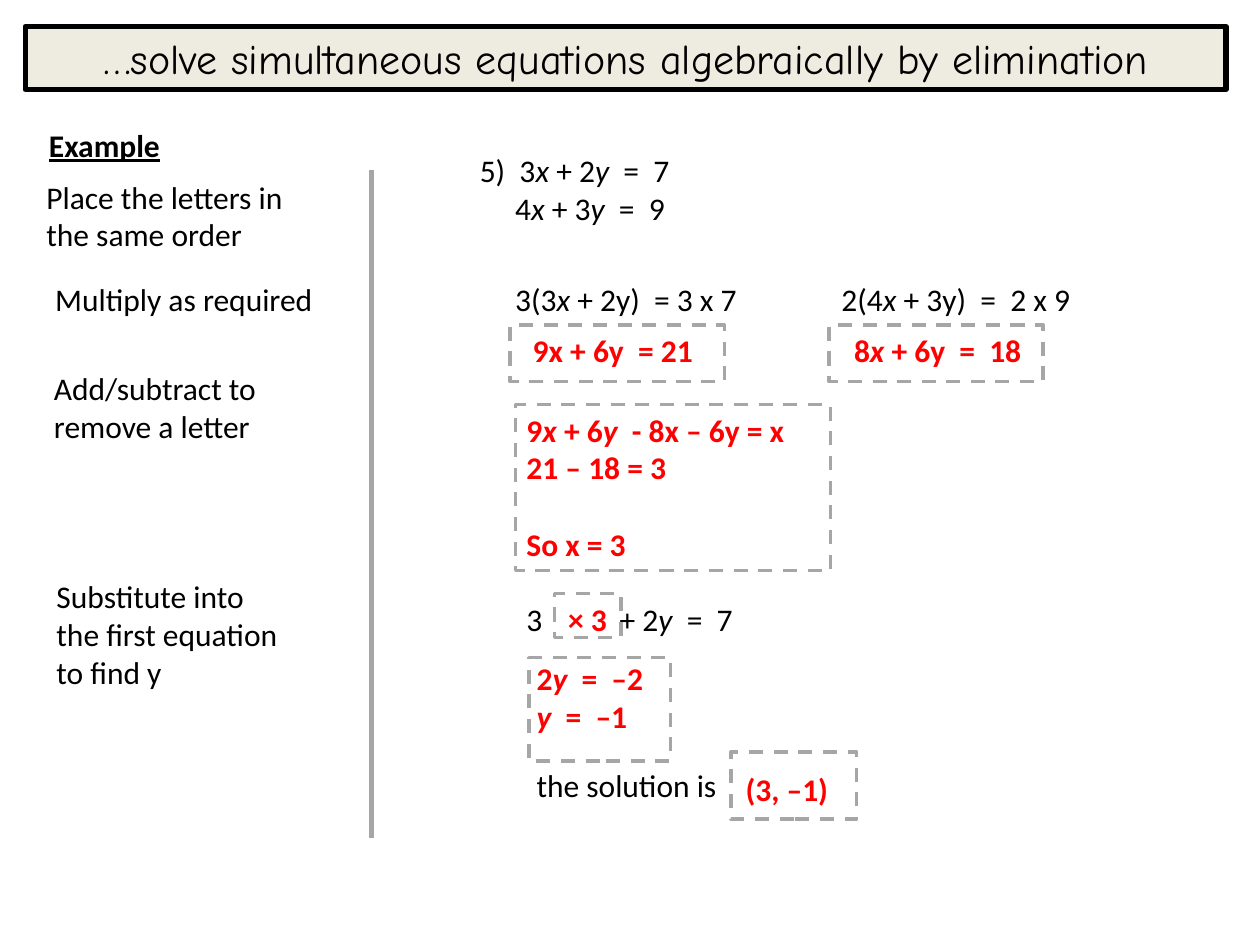
from lxml.etree import SubElement
from pptx import Presentation
from pptx.dml.color import RGBColor
from pptx.enum.dml import MSO_LINE
from pptx.enum.shapes import MSO_CONNECTOR, MSO_SHAPE
from pptx.enum.text import MSO_ANCHOR, PP_ALIGN
from pptx.oxml.ns import qn
from pptx.util import Inches, Pt

BLACK, RED, GREY, CREAM = "000000", "FF0000", "A6A6A6", "EEECE1"

STEPS = [
    ((2.7, 13.6, 21.6, 7.1), "Place the letters in the same order"),
    ((3.4, 21.7, 23, 4), "Multiply as required"),
    ((3.3, 28.8, 19.1, 7.1), "Add/subtract to remove a letter"),
    ((3.5, 45.3, 20.3, 10.1), "Substitute into the first equation to find y"),
]
WORKING = [
    ((39.9, 21.7, 20.4, 4), "3(3|x |+ 2y)  = 3 x 7", True),
    ((65.8, 21.7, 21.6, 4), "2(4|x |+ 3y)  =  2 x 9", False),
    ((41.6, 60.3, 16.5, 4), "the solution is", False),
]
ANSWERS = [
    ((41.3, 25.8, 20.3, 4), ["9x + 6y  = 21"], True),
    ((66.8, 25.8, 16.6, 4), ["8|x |+ 6y  =  18"], False),
    ((44.1, 47.1, 5.1, 4), ["× 3"], False),
    ((41.6, 51.8, 11.5, 7.1), ["2|y|  =  –2", "|y  |=  –1"], True),
    ((58.2, 60.6, 8.6, 4), ["(3, –1)"], False),
]
FRAMES = [
    (40.9, 32.1, 25, 13.2),
    (42, 52.2, 11.2, 8.2),
    (44, 47.1, 5.3, 3.5),
    (58, 59.7, 10, 5.3),
    (40.5, 25.8, 17, 4.5),
    (65.8, 25.8, 17, 4.5),
]


def grid(*units):
    """Turn units of a 100 by 75 grid into lengths."""
    return [Inches(u / 10) for u in units]


def rgb(code):
    """Turn a hex string into a colour."""
    return RGBColor.from_string(code)


def add_run(p, text, size=18, font="Calibri", color=BLACK, bold=False,
            italic=False, underline=False):
    """Add one formatted run to a paragraph."""
    r = p.add_run()
    r.text = text
    f = r.font
    f.size, f.name, f.bold, f.italic = Pt(size), font, bold, italic
    f.underline = underline
    f.color.rgb = rgb(color)


def add_text(s, box, lines, wrap=True, **style):
    """Add a text box in which bars switch italics on and off."""
    tf = s.shapes.add_textbox(*grid(*box)).text_frame
    tf.word_wrap = wrap
    for i, line in enumerate(lines):
        p = tf.add_paragraph() if i else tf.paragraphs[0]
        for j, part in enumerate(line.split("|")):
            if part:
                add_run(p, part, italic=j % 2 == 1, **style)
    return tf.paragraphs


def add_box(s, box, line, width, fill=None, dash=None):
    """Add an outlined rectangle."""
    sp = s.shapes.add_shape(MSO_SHAPE.RECTANGLE, *grid(*box))
    sp.shadow.inherit = False
    if fill:
        sp.fill.solid()
        sp.fill.fore_color.rgb = rgb(fill)
    else:
        sp.fill.background()
    sp.line.color.rgb = rgb(line)
    sp.line.width = Pt(width)
    sp.line.dash_style = dash
    return sp


def add_title(s, text):
    """Add the framed title bar."""
    tf = add_box(s, (2, 2.1, 95.3, 5), BLACK, 3, CREAM).text_frame
    tf.word_wrap = True
    tf.vertical_anchor = MSO_ANCHOR.MIDDLE
    p = tf.paragraphs[0]
    p.alignment = PP_ALIGN.CENTER
    add_run(p, text, 24, "Comic Neue")


def add_divider(s, x, top, bottom):
    """Add the vertical rule between steps and working."""
    c = s.shapes.add_connector(MSO_CONNECTOR.STRAIGHT, *grid(x, top, x, bottom))
    c.line.color.rgb = rgb(GREY)
    c.line.width = Pt(3)
    SubElement(c._element.spPr, qn("a:effectLst"))


def set_indent(p, units):
    """Indent a whole paragraph."""
    p._p.get_or_add_pPr().set("marL", str(grid(units)[0]))


def set_tab(p, units):
    """Give a paragraph one left tab stop."""
    tabs = SubElement(p._p.get_or_add_pPr(), qn("a:tabLst"))
    SubElement(tabs, qn("a:tab"), pos=str(grid(units)[0]), algn="l")


def main():
    """Build and save the slide."""
    prs = Presentation()
    prs.slide_width, prs.slide_height = grid(100, 75)
    s = prs.slides.add_slide(prs.slide_layouts[6])
    add_title(s, "…solve simultaneous equations algebraically by elimination")
    add_text(s, (2.9, 9.5, 25, 4), ["Example"], bold=True, underline=True)
    for box, text in STEPS:
        add_text(s, box, [text])
    add_divider(s, 29.5, 13.5, 66.5)

    question = add_text(s, (37.1, 11.5, 19, 7.1),
                        ["5)  3|x |+ 2|y|  =  7", "4|x| + 3|y|  =  9"])
    set_indent(question[1], 2.8)
    for box, text, wrap in WORKING:
        add_text(s, box, [text], wrap)
    substitution = add_text(s, (40.8, 47.1, 50, 4), ["3\t+ 2|y|  =  7"])
    set_tab(substitution[0], 7.4)

    elimination = add_text(
        s, (40.8, 32.1, 23.2, 13.1),
        ["9|x| + 6|y  |- 8x – 6y = x", "21 – 18 = 3", "So x = 3"],
        color=RED, bold=True)
    elimination[2].space_before = Pt(22)
    for box, lines, wrap in ANSWERS:
        add_text(s, box, lines, wrap, color=RED, bold=True)
    for box in FRAMES:
        add_box(s, box, GREY, 2, dash=MSO_LINE.DASH)
    prs.save("out.pptx")


if __name__ == "__main__":
    main()
